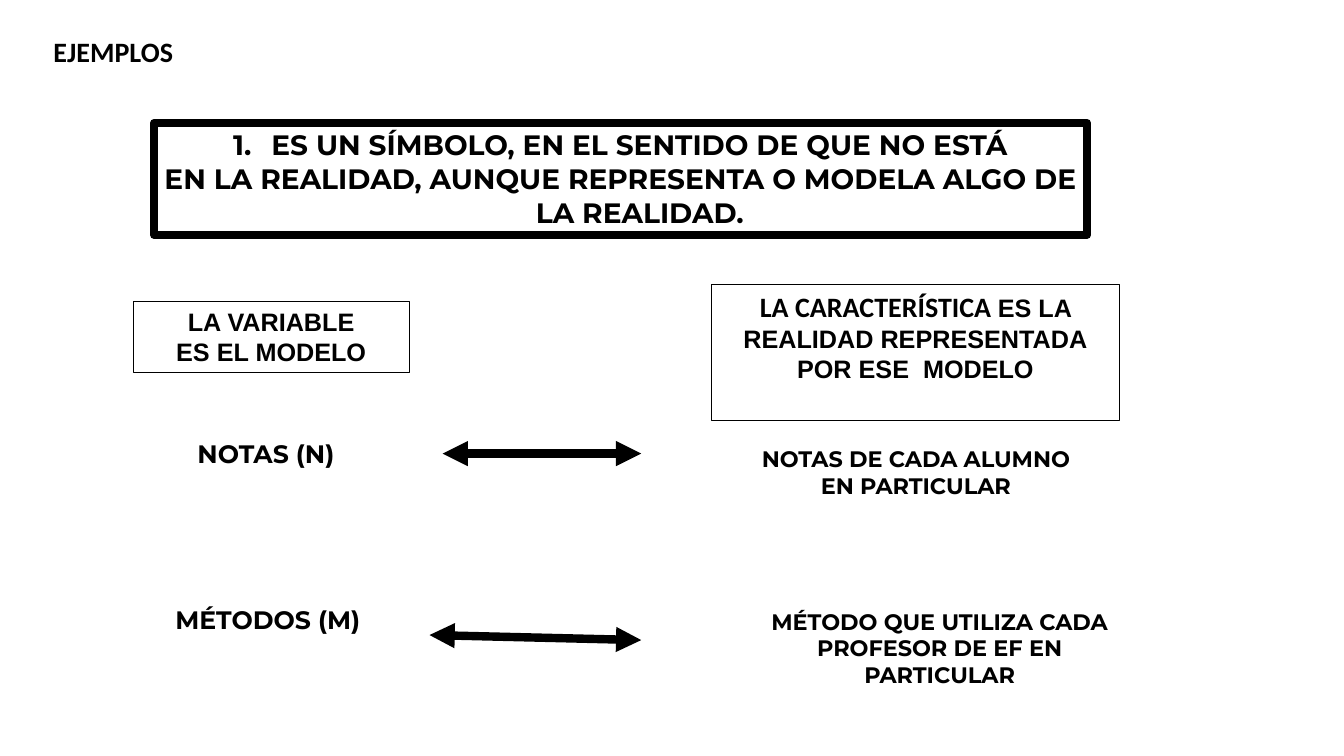
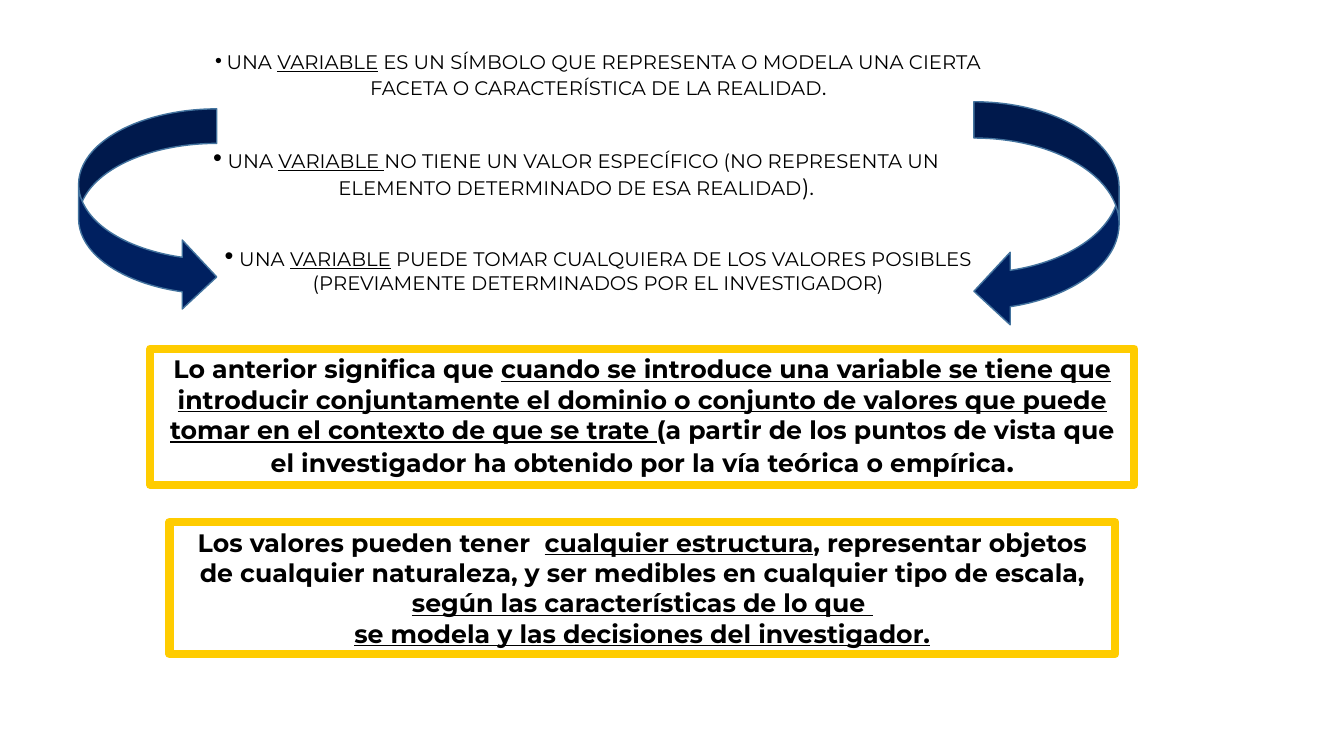
from lxml.etree import SubElement
from pptx import Presentation
from pptx.dml.color import RGBColor
from pptx.enum.shapes import MSO_CONNECTOR, MSO_SHAPE
from pptx.enum.text import MSO_ANCHOR, MSO_AUTO_SIZE, PP_ALIGN
from pptx.oxml.ns import qn
from pptx.util import Inches, Pt

BLACK, WHITE, GOLD, NAVY, STEEL = "000000", "FFFFFF", "FFCC00", "002060", "43739E"
HANG = 0.38
UNDER = {"underline": True}


def rgb(color):
    """Turn a hex string into a colour."""
    return RGBColor.from_string(color)


def place(sp, box):
    """Move a shape to a box given in inches."""
    sp.left, sp.top, sp.width, sp.height = (Inches(v) for v in box)


def within(box, dx, dy, w, h):
    """Give a part's box from its offset inside a region."""
    return box[0] + dx, box[1] + dy, w, h


def add_run(p, text, size=18, font="Montserrat", bold=True, underline=None):
    """Add one formatted run to a paragraph."""
    r = p.add_run()
    r.text = text
    r.font.size, r.font.name = Pt(size), font
    r.font.bold, r.font.underline = bold, underline
    r.font.color.rgb = rgb(BLACK)


def set_list(p, hang=0, char=None, number=False):
    """Set the hanging indent and the bullet or number of a paragraph."""
    pPr = p._p.get_or_add_pPr()
    pPr.set("marL", str(Inches(hang)))
    pPr.set("indent", str(-Inches(hang)))
    if char:
        SubElement(pPr, qn("a:buFont"), typeface="Arial")
        SubElement(pPr, qn("a:buChar"), char=char)
    elif number:
        SubElement(pPr, qn("a:buAutoNum"), type="arabicPeriod")
    else:
        SubElement(pPr, qn("a:buNone"))


def write(sp, paragraphs, align=PP_ALIGN.CENTER, wrap=True, lists=None, **fmt):
    """Fill a shape with paragraphs, each a string or a list of (text, format) runs."""
    tf = sp.text_frame
    tf.auto_size, tf.word_wrap = MSO_AUTO_SIZE.NONE, wrap
    tf.vertical_anchor = MSO_ANCHOR.TOP
    for i, runs in enumerate(paragraphs):
        p = tf.add_paragraph() if i else tf.paragraphs[0]
        p.alignment, p.line_spacing = align, 1.0
        p.space_before = p.space_after = Pt(0)
        set_list(p, **(lists[i] if lists else {}))
        for text, own in [(runs, {})] if isinstance(runs, str) else runs:
            add_run(p, text, **{**fmt, **own})


def add_label(s, box, paragraphs, **fmt):
    """Add a plain text box."""
    sp = s.shapes.add_textbox(*(Inches(v) for v in box))
    write(sp, paragraphs, **fmt)


def add_figure(s, kind, box, fill, line, weight):
    """Add a preset shape with its fill and outline."""
    sp = s.shapes.add_shape(kind, *(Inches(v) for v in box))
    sp.shadow.inherit = False
    if fill:
        sp.fill.solid()
        sp.fill.fore_color.rgb = rgb(fill)
    else:
        sp.fill.background()
    sp.line.color.rgb, sp.line.width = rgb(line), Pt(weight)
    return sp


def add_panel(s, box, paragraphs, fill=WHITE, line=BLACK, weight=6, **fmt):
    """Add a framed rectangle with text."""
    write(add_figure(s, MSO_SHAPE.RECTANGLE, box, fill, line, weight), paragraphs, **fmt)


def add_double_arrow(s, x1, y1, x2, y2):
    """Add a thick line with an arrowhead at each end."""
    c = s.shapes.add_connector(MSO_CONNECTOR.STRAIGHT, *(Inches(v) for v in (x1, y1, x2, y2)))
    c.line.color.rgb, c.line.width = rgb(BLACK), Pt(6)
    spPr = c._element.spPr
    for end in ("a:headEnd", "a:tailEnd"):
        SubElement(c.line._get_or_add_ln(), qn(end), type="triangle")
    SubElement(spPr, qn("a:effectLst"))


def comparison(s, box):
    """Set variables on the left against real characteristics on the right."""
    x, y = box
    thin = {"fill": None, "weight": 0.75, "font": "Arial"}
    add_panel(s, within(box, 0, 0.17, 2.74, 0.71), ["LA VARIABLE", "ES EL MODELO"], **thin)
    add_panel(s, within(box, 5.74, 0, 4.04, 1.35), [
        [("LA CARACTERÍSTICA ", {"size": 20, "font": "Calibri"}),
         ("ES LA REALIDAD REPRESENTADA", {})],
        "POR ESE  MODELO"], **thin)
    add_label(s, within(box, 0.54, 1.48, 1.66, 0.4), ["NOTAS (N)"],
              align=PP_ALIGN.LEFT, wrap=False)
    add_label(s, within(box, 0.32, 3.13, 2.1, 0.4), ["MÉTODOS (M)"],
              align=PP_ALIGN.LEFT, wrap=False)
    add_label(s, within(box, 6.06, 1.55, 3.41, 0.64),
              ["NOTAS DE CADA ALUMNO", "EN PARTICULAR"], wrap=False, size=16)
    add_label(s, within(box, 5.99, 3.16, 4.02, 0.91),
              ["MÉTODO QUE UTILIZA CADA PROFESOR DE EF EN PARTICULAR"], size=16)
    for x1, y1, y2 in ((3.07, 1.68, 1.68), (2.94, 3.48, 3.53)):
        add_double_arrow(s, x + x1, y + y1, x + 5.04, y + y2)


def definition_list(s, box):
    """Place the three definitions between two curved arrows."""
    definitions = (
        (0.93, 0, 0.61, 14, "VARIABLE",
         " ES UN SÍMBOLO QUE REPRESENTA O MODELA UNA CIERTA FACETA O CARACTERÍSTICA DE LA REALIDAD",
         "."),
        (0.71, 0.93, 0.67, 18, "VARIABLE ",
         "NO TIENE UN VALOR ESPECÍFICO (NO REPRESENTA UN ELEMENTO DETERMINADO DE ESA REALIDAD",
         ")."),
        (0.93, 1.9, 0.64, 18, "VARIABLE",
         " PUEDE TOMAR CUALQUIERA DE LOS VALORES POSIBLES (PREVIAMENTE DETERMINADOS POR EL INVESTIGADOR)",
         ""),
    )
    for idx, (dx, dy, h, size, term, text, ending) in enumerate(definitions, 1):
        sp = s.placeholders[idx]
        place(sp, within(box, dx, dy, 8.45, h))
        runs = [(" ", {"size": size, "font": "Calibri"}), ("UNA ", {}), (term, UNDER), (text, {})]
        if ending:
            runs.append((ending, {"size": 16}))
        write(sp, [runs], lists=[{"char": "•"}], size=14, bold=False)
    for kind, part in ((MSO_SHAPE.CURVED_LEFT_ARROW, (8.88, 0.57, 1.44, 2.24)),
                       (MSO_SHAPE.CURVED_RIGHT_ARROW, (0, 0.64, 1.37, 2.01))):
        add_figure(s, kind, within(box, *part), NAVY, STEEL, 1)


def conclusions(s, box):
    """Stack the two gold-framed conclusions."""
    add_panel(s, within(box, 0, 0, 9.76, 1.35), [[
        ("Lo anterior significa que ", {}),
        ("cuando se introduce una variable se tiene que introducir conjuntamente el dominio "
         "o conjunto de valores que puede tomar en el contexto de que se trate ", UNDER),
        ("(a partir de los puntos de vista que el investigador ha obtenido "
         "por la vía teórica o empírica", {}),
        (".", {"size": 20})]], line=GOLD)
    add_panel(s, within(box, 0.19, 1.72, 9.38, 1.31), [
        [("Los valores pueden tener  ", {}), ("cualquier estructura", UNDER),
         (", representar objetos de cualquier naturaleza, "
          "y ser medibles en cualquier tipo de escala, ", {}),
         ("según las características de lo que ", UNDER)],
        [("se modela y las decisiones del investigador.", UNDER)]],
        line=GOLD, lists=[{}, {"hang": HANG}])


def examples_slide(prs):
    """Build the slide of examples."""
    s = prs.slides.add_slide(prs.slide_layouts[5])
    place(s.shapes.title, (0.43, 0.29, 7.68, 0.44))
    write(s.shapes.title, ["EJEMPLOS"], align=PP_ALIGN.LEFT, size=20, font="Calibri")
    add_panel(s, (1.53, 1.22, 9.25, 1.11), [
        "ES UN SÍMBOLO, EN EL SENTIDO DE QUE NO ESTÁ",
        "EN LA REALIDAD, AUNQUE REPRESENTA O MODELA ALGO DE LA REALIDAD."],
        lists=[{"hang": HANG, "number": True}, {"hang": HANG}], size=20)
    comparison(s, (1.32, 2.82))


def definitions_slide(prs):
    """Build the slide of definitions and conclusions."""
    s = prs.slides.add_slide(prs.slide_layouts[4])
    for sp in (s.shapes.title, s.placeholders[4]):
        sp._element.getparent().remove(sp._element)
    definition_list(s, (0.78, 0.44))
    conclusions(s, (1.49, 3.46))


def main():
    """Build and save the presentation."""
    prs = Presentation()
    prs.slide_width, prs.slide_height = Inches(13.33), Inches(7.5)
    examples_slide(prs)
    definitions_slide(prs)
    prs.save("out.pptx")


if __name__ == "__main__":
    main()
